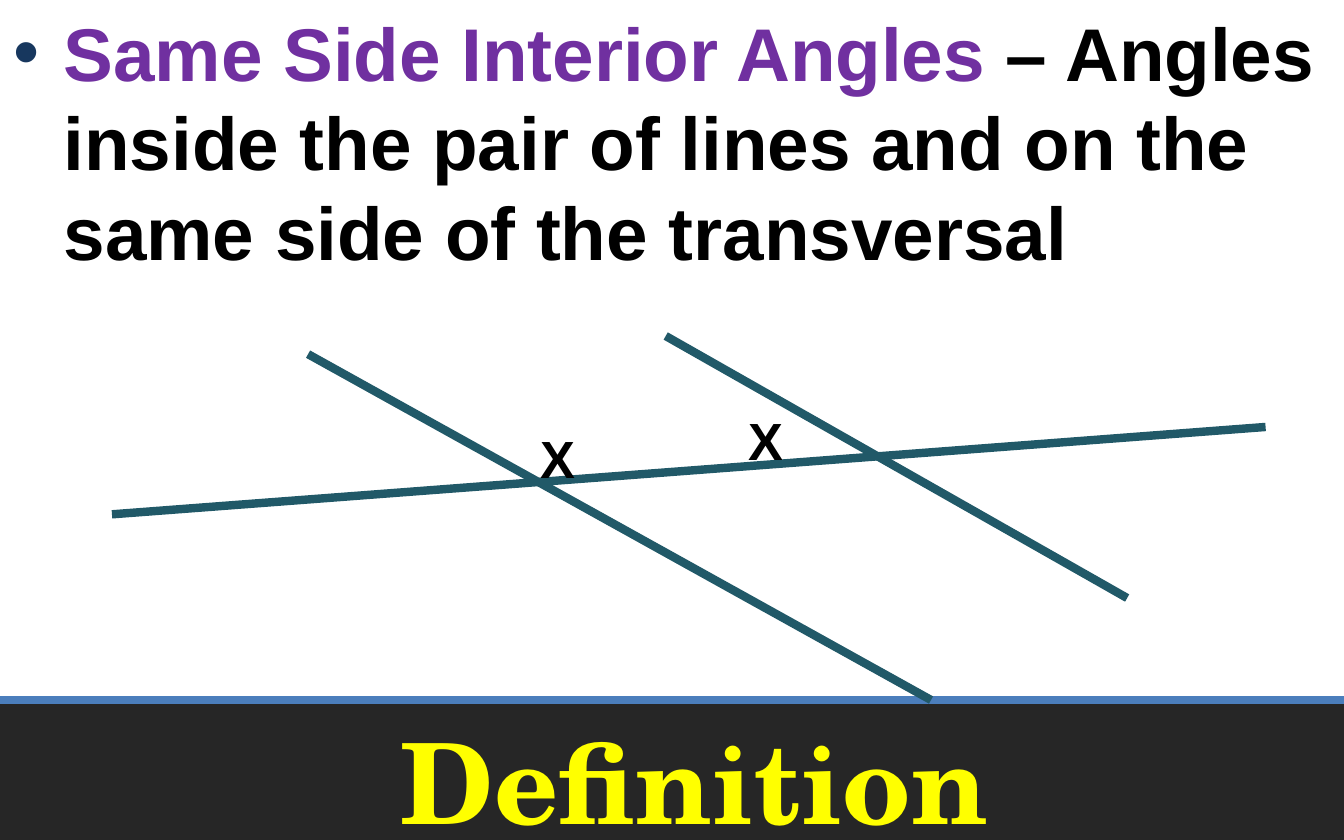
from lxml import etree
from pptx import Presentation
from pptx.dml.color import RGBColor
from pptx.enum.shapes import MSO_CONNECTOR, MSO_SHAPE
from pptx.enum.text import MSO_ANCHOR, PP_ALIGN
from pptx.oxml.ns import qn
from pptx.util import Pt

STRAIGHT = MSO_CONNECTOR.STRAIGHT
RECT = MSO_SHAPE.RECTANGLE
MIDDLE, TOP = MSO_ANCHOR.MIDDLE, MSO_ANCHOR.TOP
CENTER, LEFT = PP_ALIGN.CENTER, PP_ALIGN.LEFT

CHARCOAL = RGBColor(0x26, 0x26, 0x26)
BLUE = RGBColor(0x4B, 0x7E, 0xBC)
TEAL = RGBColor(0x21, 0x59, 0x68)
YELLOW = RGBColor(0xFF, 0xFF, 0x00)
PURPLE = RGBColor(0x70, 0x30, 0xA0)
BLACK = RGBColor(0x00, 0x00, 0x00)
NAVY = RGBColor(0x17, 0x37, 0x5E)

WIDTH, HEIGHT = 720, 450
BAND_TOP = 375

TITLE = {"name": "TeX Gyre Schola", "size": Pt(60), "bold": True}
BODY = {"name": "Arial", "size": Pt(40), "bold": True}
MARK = {"name": "Arial", "size": Pt(28), "bold": True}


def add_line(s, start, end, color, width):
    line = s.shapes.add_connector(STRAIGHT, *map(Pt, start + end))
    line.line.color.rgb = color
    line.line.width = Pt(width)
    etree.SubElement(line._element.spPr, qn("a:effectLst"))


def add_text(s, box, runs, font, align=LEFT, anchor=TOP):
    """Place one paragraph of (text, color) runs in the box and return it."""
    tf = s.shapes.add_textbox(*map(Pt, box)).text_frame
    tf.word_wrap = True
    tf.vertical_anchor = anchor
    p = tf.paragraphs[0]
    p.alignment = align
    for text, color in runs:
        r = p.add_run()
        r.text = text
        r.font.color.rgb = color
        for key, value in font.items():
            setattr(r.font, key, value)
    return p


def set_bullet(p, indent, color):
    pPr = p._p.get_or_add_pPr()
    pPr.set("marL", str(Pt(indent)))
    pPr.set("indent", str(-Pt(indent)))
    bu_clr = etree.SubElement(pPr, qn("a:buClr"))
    etree.SubElement(bu_clr, qn("a:srgbClr"), val=str(color))
    etree.SubElement(pPr, qn("a:buFont"), typeface="Arial")
    etree.SubElement(pPr, qn("a:buChar"), char="•")


def add_title_band(s, left, top, width, height):
    band = s.shapes.add_shape(RECT, Pt(left), Pt(top), Pt(width), Pt(height))
    band.shadow.inherit = False
    band.fill.solid()
    band.fill.fore_color.rgb = CHARCOAL
    band.line.fill.background()
    add_line(s, (left, top), (left + width, top), BLUE, 4)
    add_text(s, (left + 48, top + 10, width - 72, height - 10),
             [("Definition", YELLOW)], TITLE, CENTER, MIDDLE)


def add_definition(s, left, top, width, height):
    runs = [
        ("Same Side Interior Angles ", PURPLE),
        ("– Angles inside the pair of lines and on the same side "
         "of the transversal", BLACK),
    ]
    p = add_text(s, (left, top, width, height), runs, BODY)
    p.space_before = Pt(8)
    set_bullet(p, 27, NAVY)


def add_diagram(s, left, top, width, height):
    """Draw a transversal across two lines, given as fractions of the box."""
    def at(x, y):
        return left + x * width, top + y * height

    transversal = (0, 0.49), (1, 0.25)
    left_line = (0.17, 0.05), (0.71, 1)
    right_line = (0.48, 0), (0.88, 0.72)
    for start, end in (transversal, left_line, right_line):
        add_line(s, at(*start), at(*end), TEAL, 4.5)
    for corner in ((0.36, 0.23), (0.54, 0.18)):
        add_text(s, at(*corner) + (30, 41), [("X", BLACK)], MARK)


def main():
    prs = Presentation()
    prs.slide_width, prs.slide_height = Pt(WIDTH), Pt(HEIGHT)
    s = prs.slides.add_slide(prs.slide_layouts[6])
    add_title_band(s, 0, BAND_TOP, WIDTH, HEIGHT - BAND_TOP)
    add_definition(s, 0, 0, WIDTH, 385)
    add_diagram(s, 60, 180, 618, BAND_TOP - 180)
    prs.save("out.pptx")


if __name__ == "__main__":
    main()
